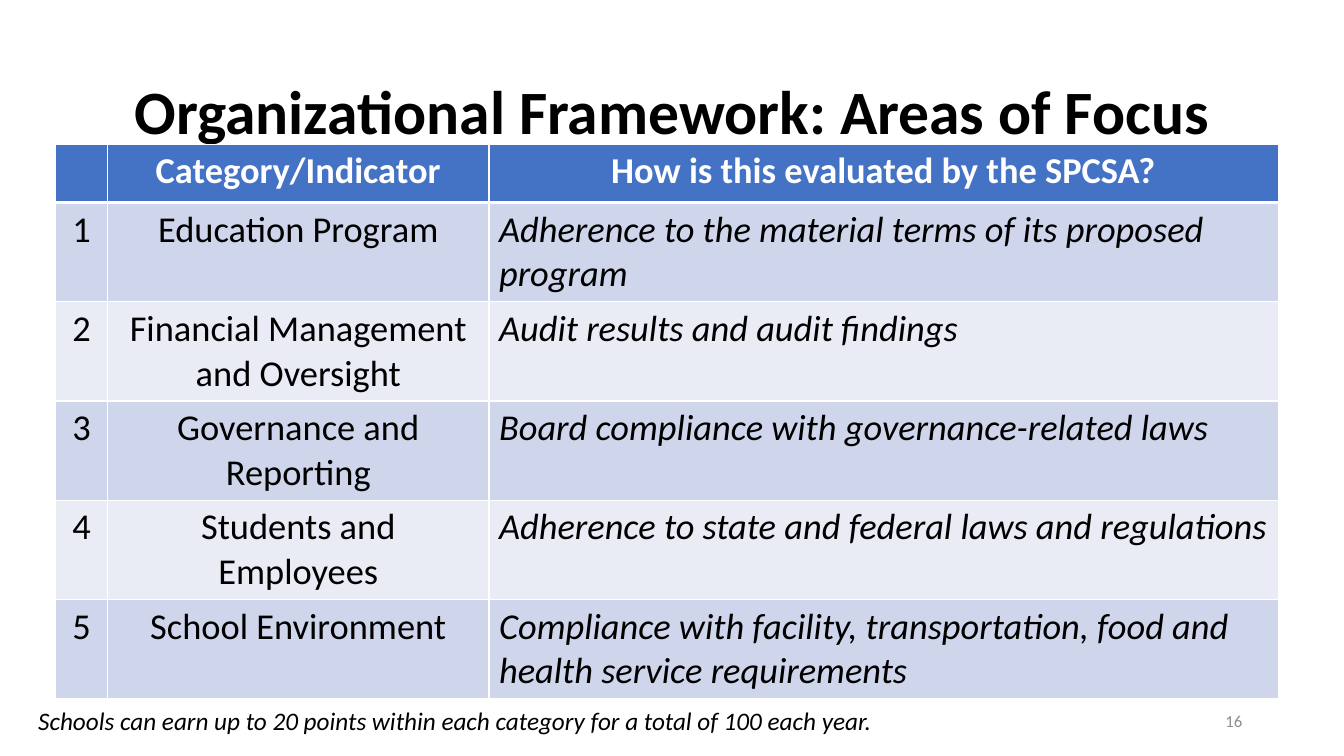
from lxml import etree
from pptx import Presentation
from pptx.dml.color import RGBColor
from pptx.enum.text import MSO_ANCHOR as Anchor, PP_ALIGN as Align
from pptx.oxml.ns import qn
from pptx.util import Inches, Pt

BLACK = RGBColor(0x00, 0x00, 0x00)
WHITE = RGBColor(0xFF, 0xFF, 0xFF)
GREY = RGBColor(0x8C, 0x8C, 0x8C)
HEADER_BLUE = RGBColor(0x44, 0x72, 0xC4)
BANDS = (RGBColor(0xCF, 0xD5, 0xEA), RGBColor(0xE9, 0xEB, 0xF5))

COLUMN_WIDTHS = (0.52, 3.78, 7.83)
HEADER_HEIGHT, ROW_HEIGHT = 0.58, 0.95
HEADINGS = ("", "Category/Indicator", "How is this evaluated by the SPCSA?")
FOCUS_AREAS = (
    ("Education Program", "Adherence to the material terms of its proposed program"),
    ("Financial Management and Oversight", "Audit results and audit findings"),
    ("Governance and Reporting", "Board compliance with governance-related laws"),
    ("Students and Employees", "Adherence to state and federal laws and regulations"),
    ("School Environment",
     "Compliance with facility, transportation, food and health service requirements"),
)


def write_text(frame, text, size, color=BLACK, bold=False, italic=False,
               align=Align.LEFT, anchor=Anchor.TOP, line_spacing=None):
    frame.word_wrap = True
    frame.vertical_anchor = anchor
    paragraph = frame.paragraphs[0]
    paragraph.alignment = align
    paragraph.line_spacing = line_spacing
    run = paragraph.add_run()
    run.text = text
    font = run.font
    font.name, font.size, font.bold, font.italic = "Calibri", Pt(size), bold, italic
    font.color.rgb = color


def format_cell(cell, fill, top=1, bottom=1):
    """Give the cell white borders (widths in points) and a solid fill."""
    properties = cell._tc.get_or_add_tcPr()
    for side, width in (("L", 1), ("R", 1), ("T", top), ("B", bottom)):
        line = etree.SubElement(properties, qn(f"a:ln{side}"), w=str(Pt(width)))
        solid = etree.SubElement(line, qn("a:solidFill"))
        etree.SubElement(solid, qn("a:srgbClr"), val=str(WHITE))
    cell.fill.solid()
    cell.fill.fore_color.rgb = fill


def add_title(slide, left, top, width, height):
    title = slide.shapes.title
    title.left, title.top = Inches(left), Inches(top)
    title.width, title.height = Inches(width), Inches(height)
    write_text(title.text_frame, "Organizational Framework: Areas of Focus", 44,
               bold=True, align=Align.CENTER, anchor=Anchor.MIDDLE, line_spacing=0.9)


def add_focus_table(slide, left, top):
    height = HEADER_HEIGHT + ROW_HEIGHT * len(FOCUS_AREAS)
    table = slide.shapes.add_table(
        len(FOCUS_AREAS) + 1, len(COLUMN_WIDTHS), Inches(left), Inches(top),
        Inches(sum(COLUMN_WIDTHS)), Inches(height)).table
    for column, width in zip(table.columns, COLUMN_WIDTHS):
        column.width = Inches(width)
    for index, row in enumerate(table.rows):
        row.height = Inches(ROW_HEIGHT if index else HEADER_HEIGHT)

    # Header row
    for column, heading in enumerate(HEADINGS):
        cell = table.cell(0, column)
        format_cell(cell, HEADER_BLUE, bottom=3)
        if heading:
            write_text(cell.text_frame, heading, 26, color=WHITE, bold=True,
                       align=Align.CENTER)

    # Numbered rows in alternating bands
    for number, area in enumerate(FOCUS_AREAS, start=1):
        for column, text in enumerate((str(number), *area)):
            cell = table.cell(number, column)
            format_cell(cell, BANDS[(number - 1) % 2], top=3 if number == 1 else 1)
            is_evaluation = column == 2
            write_text(cell.text_frame, text, 26, italic=is_evaluation,
                       align=Align.LEFT if is_evaluation else Align.CENTER)


def add_footer_text(slide, text, left, top, width, height, **text_format):
    box = slide.shapes.add_textbox(Inches(left), Inches(top), Inches(width), Inches(height))
    write_text(box.text_frame, text, **text_format)


def main():
    presentation = Presentation()
    presentation.slide_width, presentation.slide_height = Inches(13.33), Inches(7.5)
    slide = presentation.slides.add_slide(presentation.slide_layouts[5])
    add_title(slide, 0.92, 0.41, 11.5, 1.45)
    add_focus_table(slide, 0.55, 1.43)
    # Slide number and scoring note
    add_footer_text(slide, "16", 9.42, 6.95, 3, 0.4, size=12, color=GREY,
                    align=Align.RIGHT, anchor=Anchor.MIDDLE)
    add_footer_text(
        slide,
        "Schools can earn up to 20 points within each category for a total of 100 each year.",
        0.28, 6.95, 8.59, 0.4, size=18, italic=True)
    presentation.save("out.pptx")


if __name__ == "__main__":
    main()
